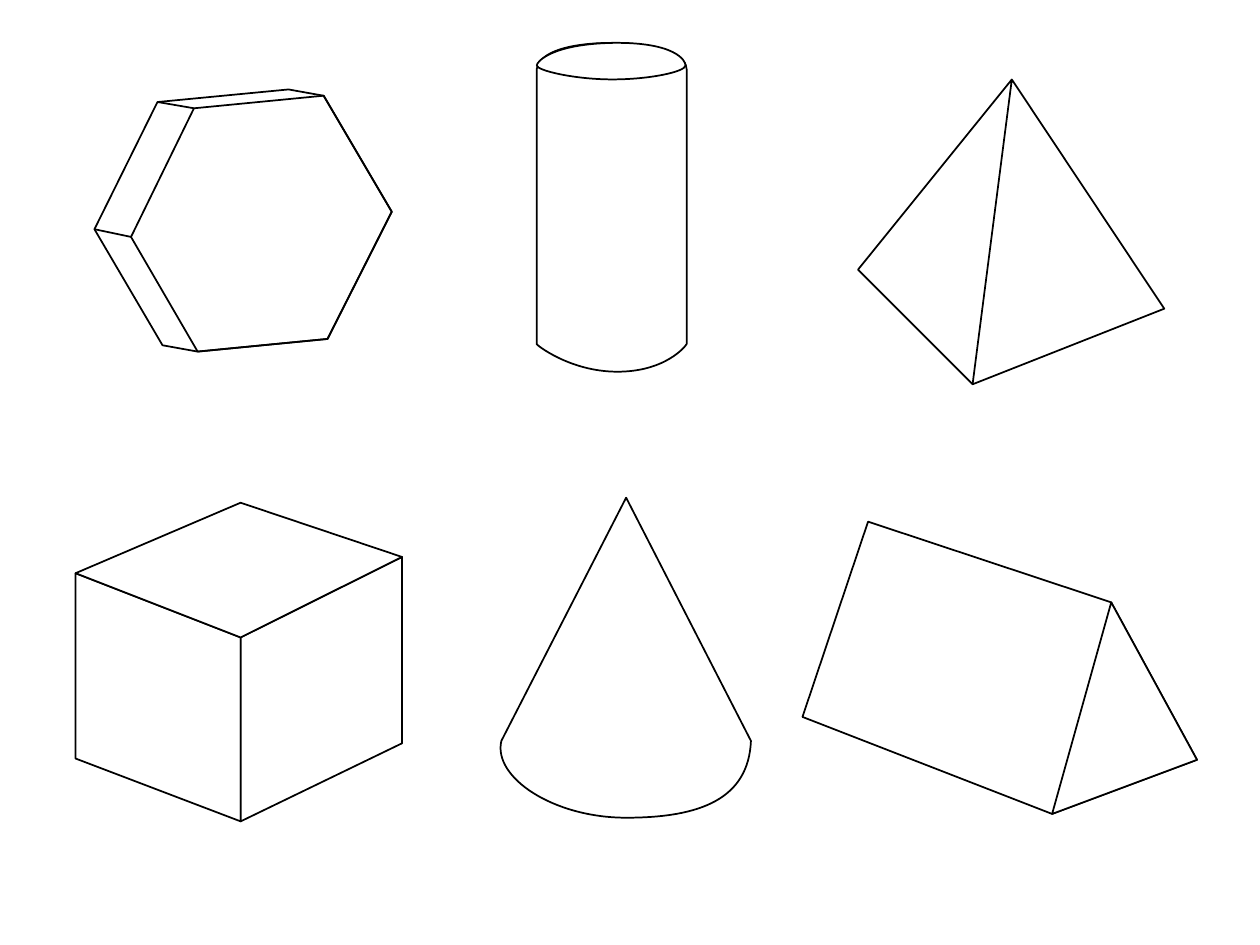
from lxml.etree import SubElement
from pptx import Presentation
from pptx.dml.color import RGBColor
from pptx.enum.shapes import MSO_CONNECTOR
from pptx.oxml.ns import qn
from pptx.util import Pt

BLACK = RGBColor(0, 0, 0)
WHITE = RGBColor(255, 255, 255)
LINE_WIDTH = Pt(1)


def bend(sp, steps):
    """Turn the three line segments of each curve step into one cubic Bezier."""
    segments = iter(list(sp._element.iter(qn("a:lnTo"))))
    for step in steps:
        first = next(segments)
        if len(step) == 3:
            first.tag = qn("a:cubicBezTo")
            for segment in (next(segments), next(segments)):
                segment.getparent().remove(segment)
                first.append(segment[0])


def outline(shapes, origin, start, *steps, fill=WHITE, close=True):
    """Draw from start; a step is a corner (x, y) or a curve (control, control, end)."""
    corners = []
    for step in steps:
        corners += step if len(step) == 3 else [step]
    builder = shapes.build_freeform(Pt(start[0]), Pt(start[1]))
    builder.add_line_segments([(Pt(x), Pt(y)) for x, y in corners], close=close)
    sp = builder.convert_to_shape(Pt(origin[0]), Pt(origin[1]))
    bend(sp, steps)
    sp.shadow.inherit = False
    if fill is None:
        sp.fill.background()
    else:
        sp.fill.solid()
        sp.fill.fore_color.rgb = fill
    sp.line.color.rgb = BLACK
    sp.line.width = LINE_WIDTH
    return sp


def edge(shapes, origin, start, end):
    left, top = origin
    line = shapes.add_connector(
        MSO_CONNECTOR.STRAIGHT,
        Pt(left + start[0]), Pt(top + start[1]), Pt(left + end[0]), Pt(top + end[1]))
    line.line.color.rgb = BLACK
    line.line.width = LINE_WIDTH
    SubElement(line._element.spPr, qn("a:effectLst"))


def pyramid(shapes, origin):
    apex, left, front, right = (87.9, 0), (0, 108.7), (65.5, 174.2), (175, 131)
    outline(shapes, origin, apex, left, front, right, apex, front, close=False)


def cone(shapes, origin):
    outline(shapes, origin, (76.3, 0), (5, 139),
            ((0, 159.8), (34.6, 182.9), (76.3, 182.9)),
            ((118.8, 182.9), (146.2, 172.1), (147.6, 139)))


def triangular_prism(shapes, origin):
    apex, right, front = (176.4, 46.1), (225.4, 136.1), (142.6, 167)
    group = shapes.add_group_shape().shapes
    outline(group, origin, (37.5, 0), apex, right, front, (0, 111.6))
    outline(group, origin, front, apex, right)


def cube(shapes, origin):
    back, left, right, front = (94.3, 0), (0, 40.3), (186.5, 31), (94.3, 77)
    low_left, low_right, low_front = (0, 146.2), (186.5, 137.5), (94.3, 182.1)
    group = shapes.add_group_shape().shapes
    for face in ((low_front, low_left, left, front),
                 (low_right, low_front, front, right),
                 (back, left, front, right)):
        outline(group, origin, *face)


def hexagonal_prism(shapes, origin):
    shared = [(131, 3.6), (169.9, 69.9), (133.2, 142.6), (59, 149.8)]
    back_left, back_top = (0, 79.9), (36, 7.2)
    front_left, front_top = (20.9, 84.3), (56.9, 10.8)
    group = shapes.add_group_shape().shapes
    outline(group, origin, (38.9, 146.2), back_left, back_top, (110.9, 0), *shared, fill=None)
    outline(group, origin, front_left, front_top, *shared, fill=None)
    edge(group, origin, back_top, front_top)
    edge(group, origin, back_left, front_left)


def cylinder(shapes, origin):
    group = shapes.add_group_shape().shapes
    outline(group, origin, (0.7, 15.5), (0.7, 172.5),
            ((0, 172.5), (19.4, 188.3), (46.8, 188.3)),
            ((74.2, 188.3), (85.7, 173.9), (86.4, 172.5)),
            (86.4, 15.5),
            ((85.7, 3.3), (58.3, 0.4), (43.9, 0.4)),
            ((29.5, 0.4), (2.9, 2.5), (0.7, 15.5)))
    outline(group, origin, (43.9, 21.3),
            ((22.3, 21.3), (0.7, 16.2), (0.7, 13.3)),
            ((0.7, 11.2), (9.4, 1), (44.6, 0.4)),
            ((79.9, 0), (85.7, 10.5), (85.7, 13.3)),
            ((85.7, 16.9), (65.5, 21.3), (43.9, 21.3)))


def main():
    prs = Presentation()
    prs.slide_width, prs.slide_height = Pt(720), Pt(540)
    shapes = prs.slides.add_slide(prs.slide_layouts[6]).shapes
    pyramid(shapes, (490.3, 45.4))
    cone(shapes, (281.5, 284.4))
    triangular_prism(shapes, (458.6, 298.1))
    cube(shapes, (43.2, 287.3))
    hexagonal_prism(shapes, (54, 51.1))
    cylinder(shapes, (306, 24.1))
    prs.save("out.pptx")


if __name__ == "__main__":
    main()
